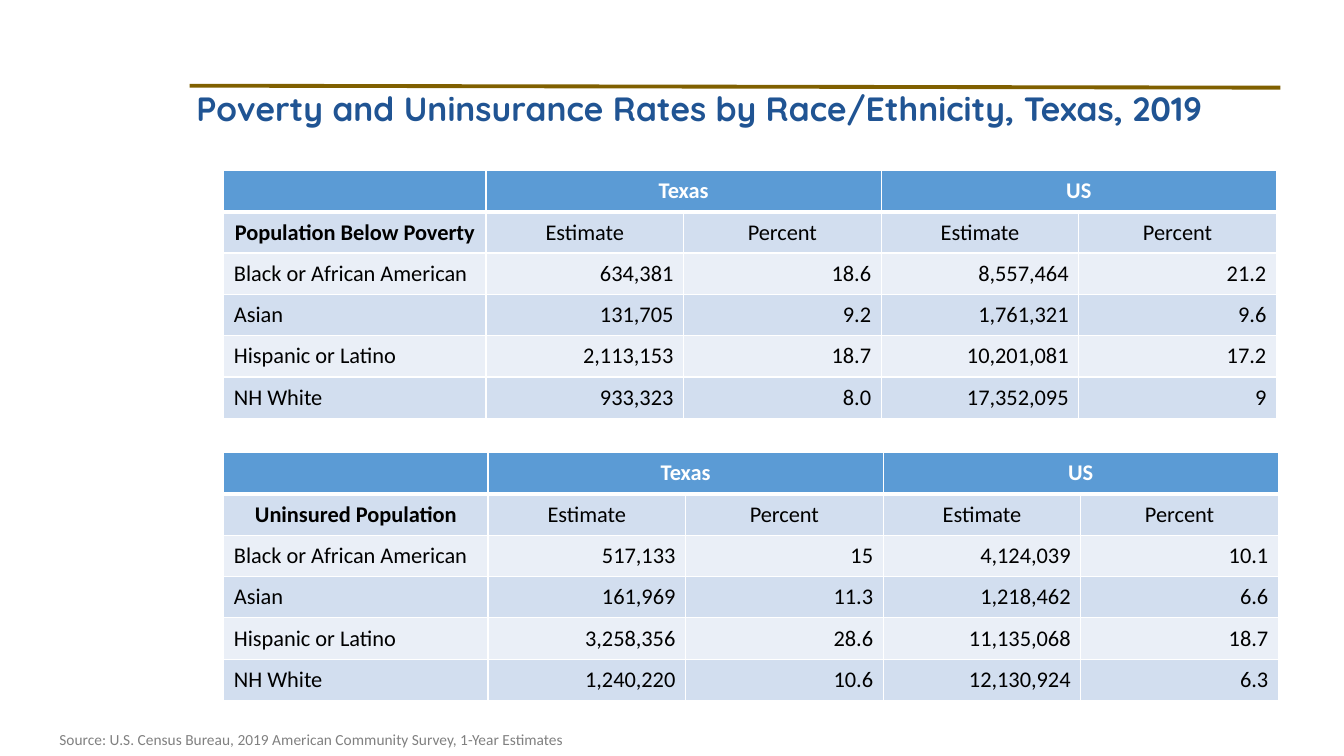
from lxml import etree
from pptx import Presentation
from pptx import util as u
from pptx.dml.color import RGBColor
from pptx.enum import shapes, text
from pptx.oxml.ns import qn

PX = 9144
COLORS = {
    "rule": "806000", "title": "205493", "source": "808080", "header": "5B9BD5",
    "dark_band": "D2DEEF", "light_band": "EAEFF7", "white": "FFFFFF", "black": "000000",
}
ALIGN = text.PP_ALIGN
GROUPS = ["", "Texas", "", "US", ""]
MEASURES = ["Estimate", "Percent"] * 2
POVERTY = [
    ["Black or African American", "634,381", "18.6", "8,557,464", "21.2"],
    ["Asian", "131,705", "9.2", "1,761,321", "9.6"],
    ["Hispanic or Latino", "2,113,153", "18.7", "10,201,081", "17.2"],
    ["NH White", "933,323", "8.0", "17,352,095", "9"],
]
UNINSURED = [
    ["Black or African American", "517,133", "15", "4,124,039", "10.1"],
    ["Asian", "161,969", "11.3", "1,218,462", "6.6"],
    ["Hispanic or Latino", "3,258,356", "28.6", "11,135,068", "18.7"],
    ["NH White", "1,240,220", "10.6", "12,130,924", "6.3"],
]


def px(*lengths):
    """Turn px lengths into EMU."""
    return [u.Emu(length * PX) for length in lengths]


def rgb(name):
    """Look up a named colour."""
    return RGBColor.from_string(COLORS[name])


def write(frame, words, size=16, font="Calibri", color="black", bold=False,
          align=ALIGN.LEFT, spacing=None):
    """Write one formatted paragraph into a text frame."""
    paragraph = frame.paragraphs[0]
    paragraph.alignment = align
    paragraph.line_spacing = spacing
    run = paragraph.add_run()
    run.text = words
    run.font.size = u.Pt(size)
    run.font.name = font
    run.font.bold = bold
    run.font.color.rgb = rgb(color)


def add_label(slide, box, words, **style):
    """Add a wrapping text box."""
    frame = slide.shapes.add_textbox(*px(*box)).text_frame
    frame.word_wrap = True
    write(frame, words, **style)


def add_rule(slide, start, end):
    """Add the line above the title."""
    rule = slide.shapes.add_connector(shapes.MSO_CONNECTOR.STRAIGHT, *px(*start, *end))
    rule.line.color.rgb = rgb("rule")
    rule.line.width = u.Pt(2.75)
    etree.SubElement(rule._element.spPr, qn("a:effectLst"))


def set_borders(cell, **widths):
    """Draw white cell borders with the given point widths."""
    properties = cell._tc.get_or_add_tcPr()
    for index, side in enumerate("LRTB"):
        border = etree.Element(qn(f"a:ln{side}"), w=str(u.Pt(widths.get(side, 1))))
        fill = etree.SubElement(border, qn("a:solidFill"))
        etree.SubElement(fill, qn("a:srgbClr"), val=COLORS["white"])
        properties.insert(index, border)


def cell_style(row, column):
    """Choose the text format for a table position."""
    if row == 0:
        return {"color": "white", "bold": True, "align": ALIGN.CENTER}
    if row == 1:
        return {"bold": column == 0, "align": ALIGN.CENTER}
    return {"align": ALIGN.RIGHT if column else ALIGN.LEFT}


def add_rates(slide, top, label_width, heading, records):
    """Add one table of estimates and percentages by group."""
    rows = [GROUPS, [heading] + MEASURES] + records
    widths = [label_width] + [196] * 4
    table = slide.shapes.add_table(
        len(rows), len(widths), *px(222, top, sum(widths), 41 * len(rows))).table
    for column, width in zip(table.columns, px(*widths)):
        column.width = width
    for first in (1, 3):
        table.cell(0, first).merge(table.cell(0, first + 1))
    for r, row in enumerate(rows):
        band = "header" if r == 0 else "dark_band" if r % 2 else "light_band"
        for c, words in enumerate(row):
            cell = table.cell(r, c)
            cell.vertical_anchor = text.MSO_ANCHOR.MIDDLE
            cell.fill.solid()
            cell.fill.fore_color.rgb = rgb(band)
            set_borders(cell, T=3 if r == 1 else 1, B=3 if r == 0 else 1)
            if words:
                write(cell.text_frame, words, **cell_style(r, c))


def main():
    """Build the slide and save it."""
    deck = Presentation()
    deck.slide_width, deck.slide_height = px(1333, 750)
    slide = deck.slides.add_slide(deck.slide_layouts[6])
    add_rule(slide, (188, 85), (1270, 87))
    add_label(slide, (185, 87, 1082, 48),
              "Poverty and Uninsurance Rates by Race/Ethnicity, Texas, 2019",
              size=24, font="Quicksand", color="title", bold=True, spacing=0.9)
    add_rates(slide, 169, 260, "Population Below Poverty", POVERTY)
    add_rates(slide, 449, 262, "Uninsured Population", UNINSURED)
    add_label(slide, (49, 719, 875, 29),
              "Source: U.S. Census Bureau, 2019 American Community Survey, 1-Year Estimates",
              size=11, color="source")
    deck.save("out.pptx")


if __name__ == "__main__":
    main()
